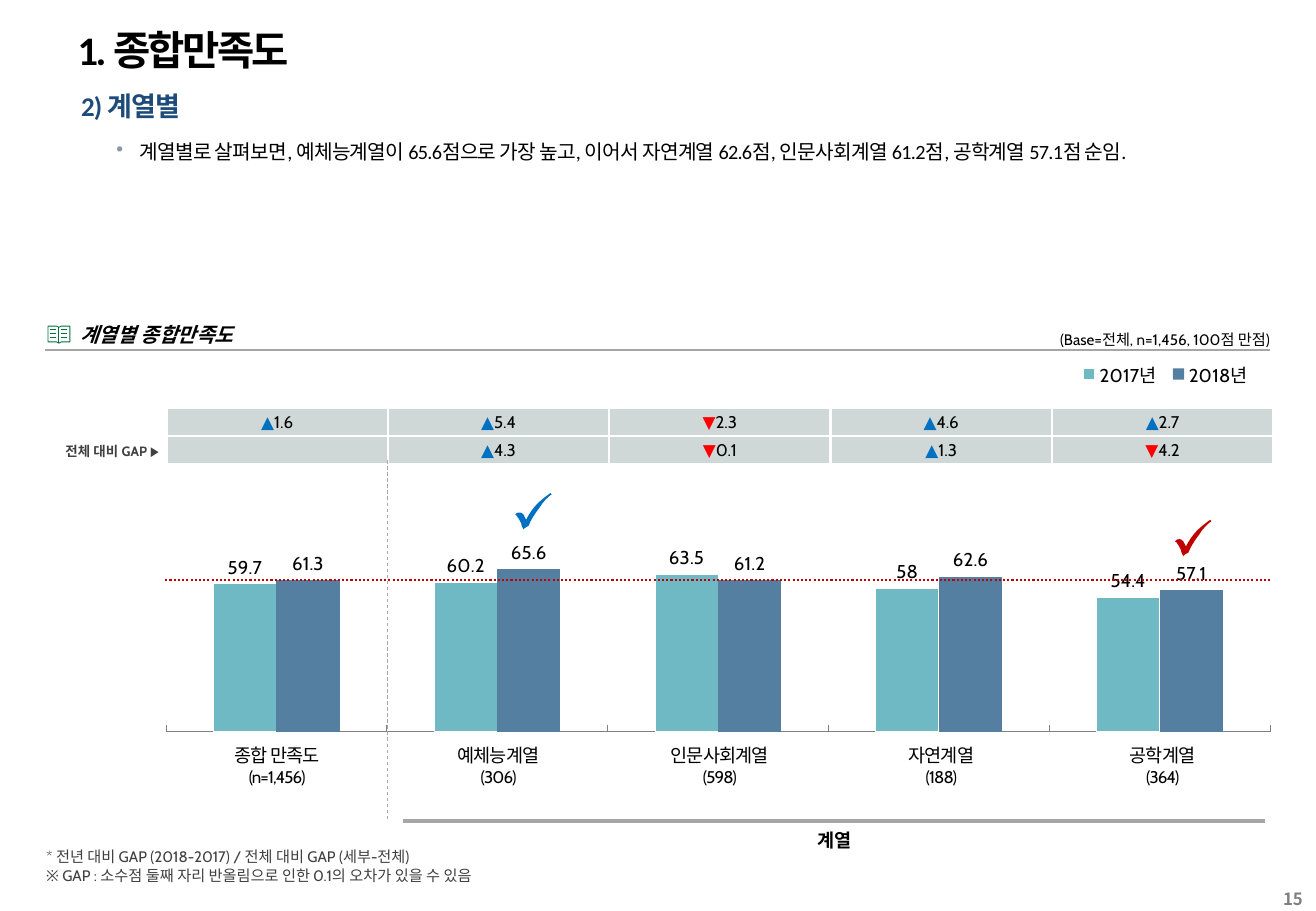
from lxml.etree import SubElement
from pptx import Presentation
from pptx.chart.data import CategoryChartData
from pptx.dml.color import RGBColor
from pptx.enum.chart import (XL_CHART_TYPE, XL_LABEL_POSITION, XL_LEGEND_POSITION,
                             XL_TICK_LABEL_POSITION, XL_TICK_MARK)
from pptx.enum.dml import MSO_LINE
from pptx.enum.shapes import MSO_CONNECTOR
from pptx.enum.text import MSO_ANCHOR, PP_ALIGN
from pptx.oxml import parse_xml
from pptx.oxml.ns import nsdecls, qn
from pptx.util import Inches, Pt

WIDE, HIGH = 108.3, 75
LEFT, COL = 13.7, 18.22
INK = dict(black="000000", navy="1F4B7B", bullet="8B96AB", green="00713B", gray="A6A6A6",
           axis="808080", note="404040", white="FFFFFF", teal="6FB9C5", steel="557FA1",
           band="D0D7D7", up="0070C0", down="FF0000", dark="C00000")
GAPS = [["▲1.6", "▲5.4", "▼2.3", "▲4.6", "▲2.7"], ["", "▲4.3", "▼0.1", "▲1.3", "▼4.2"]]
GROUPS = [["종합 만족도", "예체능계열", "인문사회계열", "자연계열", "공학계열"],
          ["(n=1,456)", "(306)", "(598)", "(188)", "(364)"]]
SCORES = {"2017년": [59.7, 60.2, 63.5, 58, 54.4], "2018년": [61.3, 65.6, 61.2, 62.6, 57.1]}
TICK = [(29, 0), (30, 1), [(27, 3), (23, 7), (20, 12)], [(16, 17), (13, 22), (11, 27)],
        (9, 28), [(8, 29), (7, 29), (7, 30)], [(6, 29), (6, 28), (5, 26)], (5, 25),
        [(4, 23), (3, 21), (2, 20)], [(2, 19), (1, 18), (0, 18)],
        [(1, 16), (3, 16), (4, 16)], [(5, 16), (7, 17), (8, 20)], (9, 22),
        [(11, 18), (14, 13), (18, 9)], [(22, 5), (26, 2), (29, 0)]]
COVER = [(0, 0), (7, 0), (9, 1), (11, 0), (18, 0), (18, 13), (11, 13), (9, 14), (7, 13),
         (0, 13), (0, 0)]


def grid(*cells):
    """Turn counts of tenth-inch grid cells into lengths."""
    return [Inches(n / 10) for n in cells]


def tint(name):
    """Look up a colour by name."""
    return RGBColor.from_string(INK[name])


def style(run, size, ink="black", face="Cabin", bold=False, slant=False, space=0):
    """Format one run."""
    font = run.font
    font.size, font.bold, font.italic, font.name = Pt(size), bold, slant, face
    font.color.rgb = tint(ink)
    props = run._r.get_or_add_rPr()
    SubElement(props, qn("a:ea")).set("typeface", "Noto Sans CJK KR")
    if space:
        props.set("spc", str(round(space * 100)))


def fill(frame, text, align=PP_ALIGN.LEFT, lead=None, after=0, **look):
    """Write text into a frame and format it."""
    frame.text = text
    for para in frame.paragraphs:
        para.alignment, para.line_spacing, para.space_after = align, lead, Pt(after)
        for run in para.runs:
            style(run, **look)


def label(slide, spot, text, pad=(0, 0), anchor=MSO_ANCHOR.MIDDLE, **look):
    """Add a text box with side and top padding."""
    frame = slide.shapes.add_textbox(*grid(*spot)).text_frame
    frame.word_wrap, frame.vertical_anchor = True, anchor
    frame.margin_left = frame.margin_right = Inches(pad[0])
    frame.margin_top = frame.margin_bottom = Inches(pad[1])
    fill(frame, text, **look)
    return frame


def bullet(frame, mark, ink, indent):
    """Give a frame's first paragraph a hanging bullet."""
    props = frame.paragraphs[0]._p.get_or_add_pPr()
    props.set("marL", str(Inches(indent)))
    props.set("indent", str(-Inches(indent)))
    color = SubElement(props, qn("a:buClr"))
    SubElement(color, qn("a:srgbClr")).set("val", INK[ink])
    SubElement(props, qn("a:buChar")).set("char", mark)


def rule(slide, ends, ink, width, dash=None):
    """Draw a straight line."""
    line = slide.shapes.add_connector(MSO_CONNECTOR.STRAIGHT, *grid(*ends))
    line.line.color.rgb, line.line.width = tint(ink), Pt(width)
    if dash:
        line.line.dash_style = dash
    SubElement(line._element.spPr, qn("a:effectLst"))


def border(cell, sides, ink, width):
    """Draw the named borders of a table cell."""
    props = cell._tc.get_or_add_tcPr()
    for place, side in enumerate(sides):
        props.insert(place, parse_xml(
            f'<a:ln{side} {nsdecls("a")} w="{Pt(width)}"><a:solidFill>'
            f'<a:srgbClr val="{INK[ink]}"/></a:solidFill></a:ln{side}>'))


def table(slide, spot, rows, band=None, top=0.01, anchor=MSO_ANCHOR.TOP):
    """Add a plain table and return its cells by row."""
    shape = slide.shapes.add_table(len(rows), len(rows[0]), *grid(*spot))
    body = shape.table
    body.first_row = body.horz_banding = False
    for cell in body.iter_cells():
        cell.margin_left = cell.margin_right = Inches(0.01)
        cell.margin_top, cell.margin_bottom = Inches(top), 0
        cell.vertical_anchor = anchor
        if band:
            cell.fill.solid()
            cell.fill.fore_color.rgb = tint(band)
        else:
            cell.fill.background()
    return [[body.cell(r, c) for c in range(len(row))] for r, row in enumerate(rows)]


def gaps(slide):
    """Add the table of gaps."""
    cells = table(slide, (LEFT, 33.6, 5 * COL, 4.6), GAPS, "band", anchor=MSO_ANCHOR.MIDDLE)
    for row, texts in zip(cells, GAPS):
        for cell, text in zip(row, texts):
            border(cell, "LRTB", "white", 1.5)
            para = cell.text_frame.paragraphs[0]
            para.font.size, para.alignment = Pt(10), PP_ALIGN.CENTER
            if text:
                para.text = text[0]
                style(para.runs[0], 10, "up" if text[0] == "▲" else "down")
                value = para.add_run()
                value.text = text[1:]
                style(value, 10)


def groups(slide):
    """Add the group names and sizes below the chart."""
    cells = table(slide, (LEFT, 60.9, 5 * COL, 4.4), GROUPS)
    for row, texts, size in zip(cells, GROUPS, (11, 10)):
        for cell, text in zip(row, texts):
            fill(cell.text_frame, text, PP_ALIGN.CENTER, size=size, space=-0.5)
    cell = table(slide, (33.1, 67.6, 71.1, 2.6), [["계열"]], top=0.04)[0][0]
    border(cell, "T", "gray", 2.25)
    fill(cell.text_frame, "계열", PP_ALIGN.CENTER, size=11, bold=True)


def place(node, index, box, inner=""):
    """Fix a chart part's place as shares of the chart."""
    for old in node.findall(qn("c:layout")):
        node.remove(old)
    sizes = "".join(f'<c:{key} val="{val}"/>' for key, val in zip("xywh", box))
    node.insert(index, parse_xml(
        f'<c:layout {nsdecls("c")}><c:manualLayout>{inner}<c:xMode val="edge"/>'
        f'<c:yMode val="edge"/>{sizes}</c:manualLayout></c:layout>'))


def scores(slide):
    """Add the column chart of both years."""
    data = CategoryChartData()
    data.categories = ["1", "2", "3", "4", "5"]
    for name, vals in SCORES.items():
        data.add_series(name, vals)
    chart = slide.shapes.add_chart(XL_CHART_TYPE.COLUMN_CLUSTERED,
                                   *grid(3.57, 28.7, 101, 32.2), data).chart
    chart.has_title = False
    chart.font.size, chart.font.name = Pt(11), "Cabin"
    chart.font.color.rgb = tint("black")
    chart.has_legend = True
    chart.legend.position = XL_LEGEND_POSITION.TOP
    chart.legend.include_in_layout = False
    place(chart.legend._element, 1, (0.84, 0.03, 0.15, 0.07))
    place(chart._chartSpace.chart.plotArea, 0, (0.1, 0.22, 0.9, 0.76),
          '<c:layoutTarget val="inner"/>')
    for axis in (chart.category_axis, chart.value_axis):
        axis.tick_label_position = XL_TICK_LABEL_POSITION.NONE
        axis.major_tick_mark = axis.minor_tick_mark = XL_TICK_MARK.NONE
        axis.has_major_gridlines = False
    chart.category_axis.major_tick_mark = XL_TICK_MARK.INSIDE
    edge = chart.category_axis.format.line
    edge.color.rgb, edge.width = tint("axis"), Pt(0.5)
    chart.value_axis.format.line.fill.background()
    chart.value_axis.minimum_scale, chart.value_axis.maximum_scale = 0, 120
    plot = chart.plots[0]
    plot.gap_width, plot.overlap, plot.vary_by_categories = 150, 0, False
    for bars, ink, form in zip(plot.series, ("teal", "steel"), ("General", "####.0")):
        bars.format.fill.solid()
        bars.format.fill.fore_color.rgb = tint(ink)
        tags = bars.data_labels
        tags.show_value, tags.position = True, XL_LABEL_POSITION.OUTSIDE_END
        tags.number_format, tags.number_format_is_linked = form, False
    rim = plot.series[0].format.line
    rim.color.rgb, rim.width = tint("white"), Pt(0.5)
    plot.series[1].format.line.fill.background()


def check(slide, left, top, ink):
    """Draw a check mark."""
    points = [TICK[0]]
    for step in TICK[1:]:
        if isinstance(step, tuple):
            points.append(step)
            continue
        knots = [points[-1], *step]
        for t in (0.25, 0.5, 0.75, 1):
            parts = ((1 - t) ** 3, 3 * t * (1 - t) ** 2, 3 * t * t * (1 - t), t ** 3)
            points.append(tuple(sum(p * k[i] for p, k in zip(parts, knots)) for i in (0, 1)))
    points = [(round(x * 10), round(y * 10)) for x, y in points]
    pen = slide.shapes.build_freeform(*points[0], scale=Inches(0.001))
    pen.add_line_segments(points[1:], close=True)
    mark = pen.convert_to_shape(*grid(left, top))
    mark.shadow.inherit = False
    mark.fill.solid()
    mark.fill.fore_color.rgb = tint(ink)
    mark.line.fill.background()


def book(slide, left, top):
    """Draw an open book in outline."""
    pen = slide.shapes.build_freeform(*COVER[0], scale=Inches(0.01))
    pen.add_line_segments(COVER[1:], close=True)
    rows = [((x, y), (x + 5, y)) for x in (2, 11) for y in (3, 6, 9)]
    for start, end in [((9, 1), (9, 14)), *rows]:
        pen.move_to(*start)
        pen.add_line_segments([end], close=False)
    icon = pen.convert_to_shape(*grid(left, top))
    icon.shadow.inherit = False
    icon.fill.background()
    icon.line.color.rgb, icon.line.width = tint("green"), Pt(0.5)


def main():
    """Build the slide and save it."""
    deck = Presentation()
    deck.slide_width, deck.slide_height = grid(WIDE, HIGH)
    slide = deck.slides.add_slide(deck.slide_layouts[6])
    label(slide, (102, 72.9, 6.2, 2.1), "15", (0.1, 0), align=PP_ALIGN.RIGHT, size=10,
          ink="axis", face="Noto Sans CJK KR", bold=True)
    label(slide, (5.4, 1.6, 36.5, 5), "1. 종합만족도", (0.1, 0.05), size=24,
          face="Calibri", bold=True, space=-1.5)
    label(slide, (5.7, 6.5, 75.8, 3.9), "2) 계열별", (0.1, 0.05), lead=1.2, after=1.5,
          size=16, ink="navy", face="Calibri", bold=True, space=-0.5)
    body = label(slide, (8.6, 10.6, 96.8, 3.1),
                 "계열별로 살펴보면, 예체능계열이 65.6점으로 가장 높고, 이어서 자연계열 62.6점, "
                 "인문사회계열 61.2점, 공학계열 57.1점 순임.", (0.1, 0.05), MSO_ANCHOR.TOP,
                 lead=1.2, after=4, size=12, face="Calibri", space=-0.42)
    bullet(body, "•", "bullet", 0.19)
    label(slide, (74.5, 27.2, 30, 1.5), "(Base=전체, n=1,456, 100점 만점)",
          anchor=MSO_ANCHOR.BOTTOM, align=PP_ALIGN.RIGHT, size=9)
    rule(slide, (3.7, 28.8, 104.5, 28.8), "gray", 1.5)
    book(slide, 3.95, 26.85)
    label(slide, (6.6, 26.5, 19, 2), "계열별 종합만족도", size=12, bold=True, slant=True)
    scores(slide)
    groups(slide)
    rule(slide, (13.6, 47.75, 104.5, 47.75), "dark", 1.25, MSO_LINE.ROUND_DOT)
    label(slide, (3.8, 69.8, 45, 3), "* 전년 대비 GAP (2018-2017) / 전체 대비 GAP (세부-전체)\n"
          "※ GAP : 소수점 둘째 자리 반올림으로 인한 0.1의 오차가 있을 수 있음",
          anchor=MSO_ANCHOR.TOP, size=9, ink="note")
    gaps(slide)
    label(slide, (3.8, 36.2, 9.3, 1.9), "전체 대비 GAP ▶", align=PP_ALIGN.RIGHT, size=8,
          ink="note", bold=True)
    rule(slide, (31.9, 37.9, 31.9, 67.4), "gray", 0.5, MSO_LINE.DASH)
    check(slide, 96.7, 42.8, "dark")
    check(slide, 42.4, 40.6, "up")
    deck.save("out.pptx")


if __name__ == "__main__":
    main()
